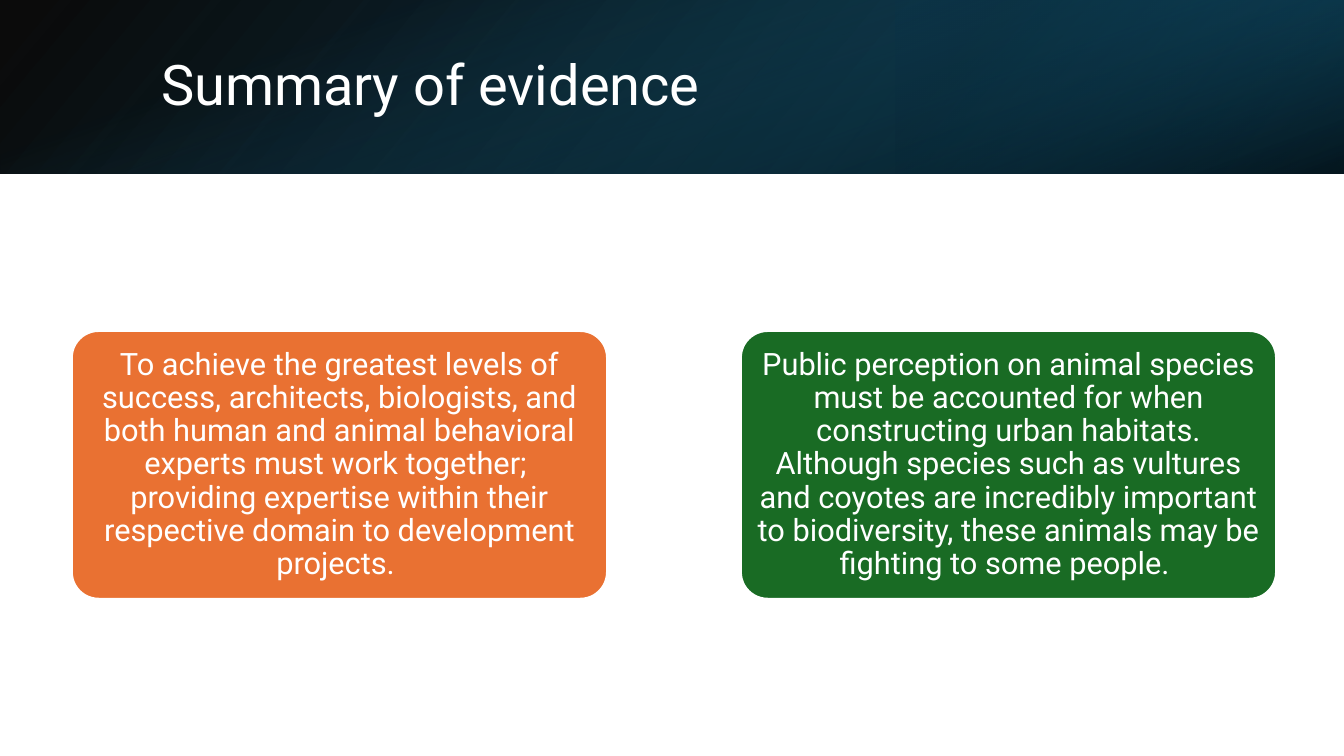
from lxml import etree
from pptx import Presentation
from pptx.dml.color import RGBColor
from pptx.enum import shapes, text
from pptx.oxml import ns
from pptx.util import Cm, Pt

WHITE = RGBColor(0xFF, 0xFF, 0xFF)
BLACK = RGBColor(0x00, 0x00, 0x00)
NAVY = RGBColor(0x10, 0x48, 0x62)
DEEP_TEAL = RGBColor(0x0B, 0x30, 0x41)
TEAL = RGBColor(0x15, 0x60, 0x82)
ORANGE = RGBColor(0xE9, 0x71, 0x32)
GREEN = RGBColor(0x19, 0x6B, 0x24)

FONT = "Roboto"
SLIDE_W, SLIDE_H = 33.87, 19.05
BANNER_H = 4.38
CARD_LEFT, CARD_TOP, CARD_STEP = 1.81, 8.34, 16.86
CARD_W, CARD_H = 13.49, 6.75

CARDS = [
    (ORANGE, "To achieve the greatest levels of success, architects, biologists, "
             "and both human and animal behavioral experts must work together;  "
             "providing expertise within their respective domain to development "
             "projects. "),
    (GREEN, "Public perception on animal species must be accounted for when "
            "constructing urban habitats. Although species such as vultures and "
            "coyotes are incredibly important to biodiversity, these animals may "
            "be fighting to some people. "),
]


def add_gradient_rect(s, left, top, width, height, angle, stops, rotation=0, flip=False):
    """Add a rectangle whose stops are (position, colour, opacity %); angle is clockwise."""
    sp = s.shapes.add_shape(shapes.MSO_SHAPE.RECTANGLE,
                            Cm(left), Cm(top), Cm(width), Cm(height))
    sp.shadow.inherit = False
    sp.line.fill.background()
    sp.rotation = rotation
    if flip:
        sp._element.spPr.find(ns.qn("a:xfrm")).set("flipH", "1")
    sp.fill.gradient()
    sp.fill.gradient_angle = 360 - angle
    for stop, (position, color, opacity) in zip(sp.fill.gradient_stops, stops):
        stop.position = position / 100
        stop.color.rgb = color
        clr = stop._gs.find(ns.qn("a:srgbClr"))
        etree.SubElement(clr, ns.qn("a:alpha"), val=str(opacity * 1000))


def write_text(sp, words, size, align):
    tf = sp.text_frame
    tf.word_wrap = True
    tf.vertical_anchor = text.MSO_ANCHOR.MIDDLE
    tf.text = words
    p = tf.paragraphs[0]
    p.alignment = align
    p.line_spacing = 0.9
    r = p.runs[0]
    r.font.name = FONT
    r.font.size = Pt(size)
    r.font.color.rgb = WHITE


def add_title(s, words):
    sp = s.shapes.add_textbox(Cm(3.81), Cm(0.97), Cm(27.89), Cm(2.44))
    write_text(sp, words, 40, text.PP_ALIGN.LEFT)


def add_card(s, left, color, words):
    sp = s.shapes.add_shape(shapes.MSO_SHAPE.ROUNDED_RECTANGLE,
                            Cm(left), Cm(CARD_TOP), Cm(CARD_W), Cm(CARD_H))
    sp.adjustments[0] = 0.1
    sp.shadow.inherit = False
    sp.fill.solid()
    sp.fill.fore_color.rgb = color
    sp.line.color.rgb = WHITE
    sp.line.width = Pt(1.5)
    tf = sp.text_frame
    tf.margin_left = tf.margin_right = Cm(0.12)
    tf.margin_top = tf.margin_bottom = Cm(0.08)
    write_text(sp, words, 22, text.PP_ALIGN.CENTER)


def main():
    prs = Presentation()
    prs.slide_width, prs.slide_height = Cm(SLIDE_W), Cm(SLIDE_H)
    s = prs.slides.add_slide(prs.slide_layouts[6])

    # Banner: base gradient, right-hand glow, and a turned shading layer
    add_gradient_rect(s, 0, 0, SLIDE_W, BANNER_H, 140,
                      [(0, BLACK, 96), (100, NAVY, 100)], flip=True)
    glow_w = SLIDE_W / 3
    add_gradient_rect(s, SLIDE_W - glow_w, 0, glow_w, BANNER_H, 320,
                      [(19, DEEP_TEAL, 68), (100, TEAL, 79)], rotation=180, flip=True)
    offset = (SLIDE_W - BANNER_H) / 2
    add_gradient_rect(s, offset, -offset, BANNER_H, SLIDE_W, 340,
                      [(23, TEAL, 0), (99, BLACK, 74)], rotation=90)

    # Title
    add_title(s, "Summary of evidence")

    # Evidence cards
    for i, (color, words) in enumerate(CARDS):
        add_card(s, CARD_LEFT + i * CARD_STEP, color, words)

    prs.save("out.pptx")


if __name__ == "__main__":
    main()
